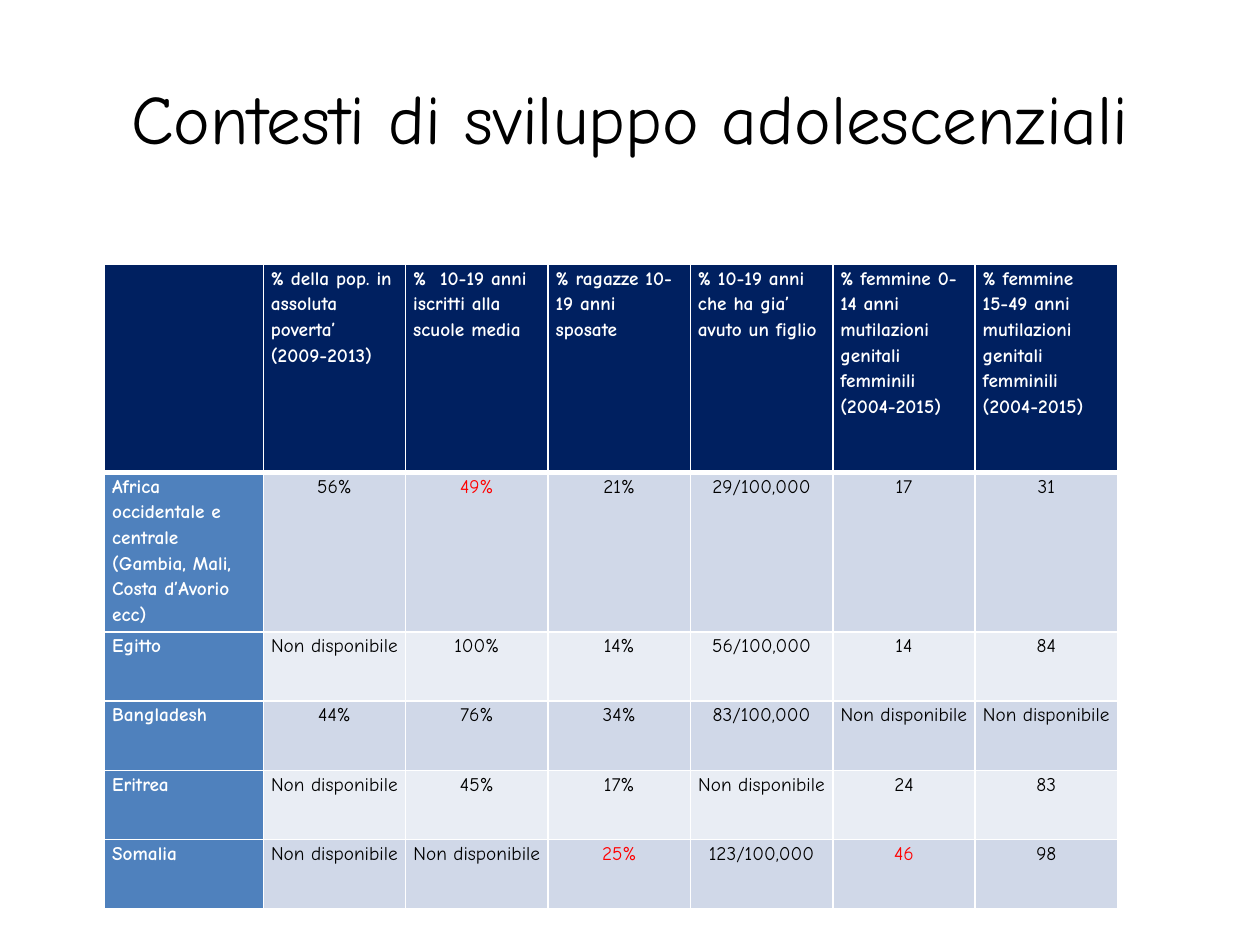
"""Build a slide with a table of adolescent development contexts."""
from lxml.etree import SubElement
from pptx import Presentation
from pptx.dml.color import RGBColor
from pptx.enum.text import MSO_ANCHOR, PP_ALIGN
from pptx.oxml.ns import qn
from pptx.util import Inches, Pt

FONT = "Comic Neue"
BLACK = RGBColor(0x00, 0x00, 0x00)
WHITE = RGBColor(0xFF, 0xFF, 0xFF)
RED = RGBColor(0xFF, 0x00, 0x00)
NAVY = RGBColor(0x00, 0x20, 0x60)
BLUE = RGBColor(0x4F, 0x81, 0xBD)
BANDS = (RGBColor(0xE9, 0xED, 0xF4), RGBColor(0xD0, 0xD8, 0xE8))

ND = "Non disponibile"
ROWS = [
    ["",
     "% della pop. in assoluta poverta’\n(2009-2013)",
     "%  10-19 anni iscritti alla scuole media",
     "% ragazze 10-19 anni  sposate",
     "% 10-19 anni che ha gia’ avuto un figlio",
     "% femmine 0-14 anni mutilazioni genitali femminili\n(2004-2015)",
     "% femmine  15-49 anni mutilazioni genitali femminili\n(2004-2015)"],
    ["Africa occidentale e centrale (Gambia, Mali, Costa d’Avorio ecc)",
     "56%", "49%", "21%", "29/100,000", "17", "31"],
    ["Egitto", ND, "100%", "14%", "56/100,000", "14", "84"],
    ["Bangladesh", "44%", "76%", "34%", "83/100,000", ND, ND],
    ["Eritrea", ND, "45%", "17%", ND, "24", "83"],
    ["Somalia", "Non disponibile ", ND, "25%", "123/100,000", "46", "98"],
]
HIGHLIGHTS = {(1, 2), (5, 3), (5, 5)}
COL_WIDTHS = [1.26] + [1.13] * 6
ROW_HEIGHTS = [1.65, 1.1] + [0.55] * 4


def style_font(p, size, color, bold=False):
    p.font.name = FONT
    p.font.size = Pt(size)
    p.font.bold = bold
    p.font.color.rgb = color


def add_title(slide, text):
    tf = slide.shapes.add_textbox(
        Inches(0.5), Inches(0.3), Inches(9), Inches(1.25)).text_frame
    tf.word_wrap = True
    tf.vertical_anchor = MSO_ANCHOR.MIDDLE
    p = tf.paragraphs[0]
    p.text = text
    p.alignment = PP_ALIGN.CENTER
    style_font(p, 39.6, BLACK)


def set_borders(cell, top, bottom):
    tc_pr = cell._tc.get_or_add_tcPr()
    for side, width in (("L", 1), ("R", 1), ("T", top), ("B", bottom)):
        ln = SubElement(tc_pr, qn(f"a:ln{side}"), w=str(Pt(width)))
        fill = SubElement(ln, qn("a:solidFill"))
        SubElement(fill, qn("a:srgbClr"), val=str(WHITE))


def fill_cell(cell, text, row, col):
    is_label = row == 0 or col == 0
    set_borders(cell, 3 if row == 1 else 1, 3 if row == 0 else 1)
    cell.fill.solid()
    cell.fill.fore_color.rgb = (
        NAVY if row == 0 else BLUE if col == 0 else BANDS[row % 2])
    cell.margin_left = cell.margin_right = Inches(0.06)
    cell.margin_top = cell.margin_bottom = 0
    cell.text = text
    color = WHITE if is_label else RED if (row, col) in HIGHLIGHTS else BLACK
    for p in cell.text_frame.paragraphs:
        p.alignment = PP_ALIGN.LEFT if is_label else PP_ALIGN.CENTER
        p.line_spacing = 1.15
        style_font(p, 11, color, is_label)


def add_data_table(slide):
    table = slide.shapes.add_table(
        len(ROWS), len(COL_WIDTHS), Inches(0.83), Inches(2.1),
        Inches(sum(COL_WIDTHS)), Inches(sum(ROW_HEIGHTS))).table
    for column, width in zip(table.columns, COL_WIDTHS):
        column.width = Inches(width)
    for row, height in zip(table.rows, ROW_HEIGHTS):
        row.height = Inches(height)
    for i, texts in enumerate(ROWS):
        for j, text in enumerate(texts):
            fill_cell(table.cell(i, j), text, i, j)


def main():
    prs = Presentation()
    prs.slide_width, prs.slide_height = Inches(10), Inches(7.5)
    slide = prs.slides.add_slide(prs.slide_layouts[6])
    add_title(slide, "Contesti di sviluppo adolescenziali")
    add_data_table(slide)
    prs.save("out.pptx")


if __name__ == "__main__":
    main()
